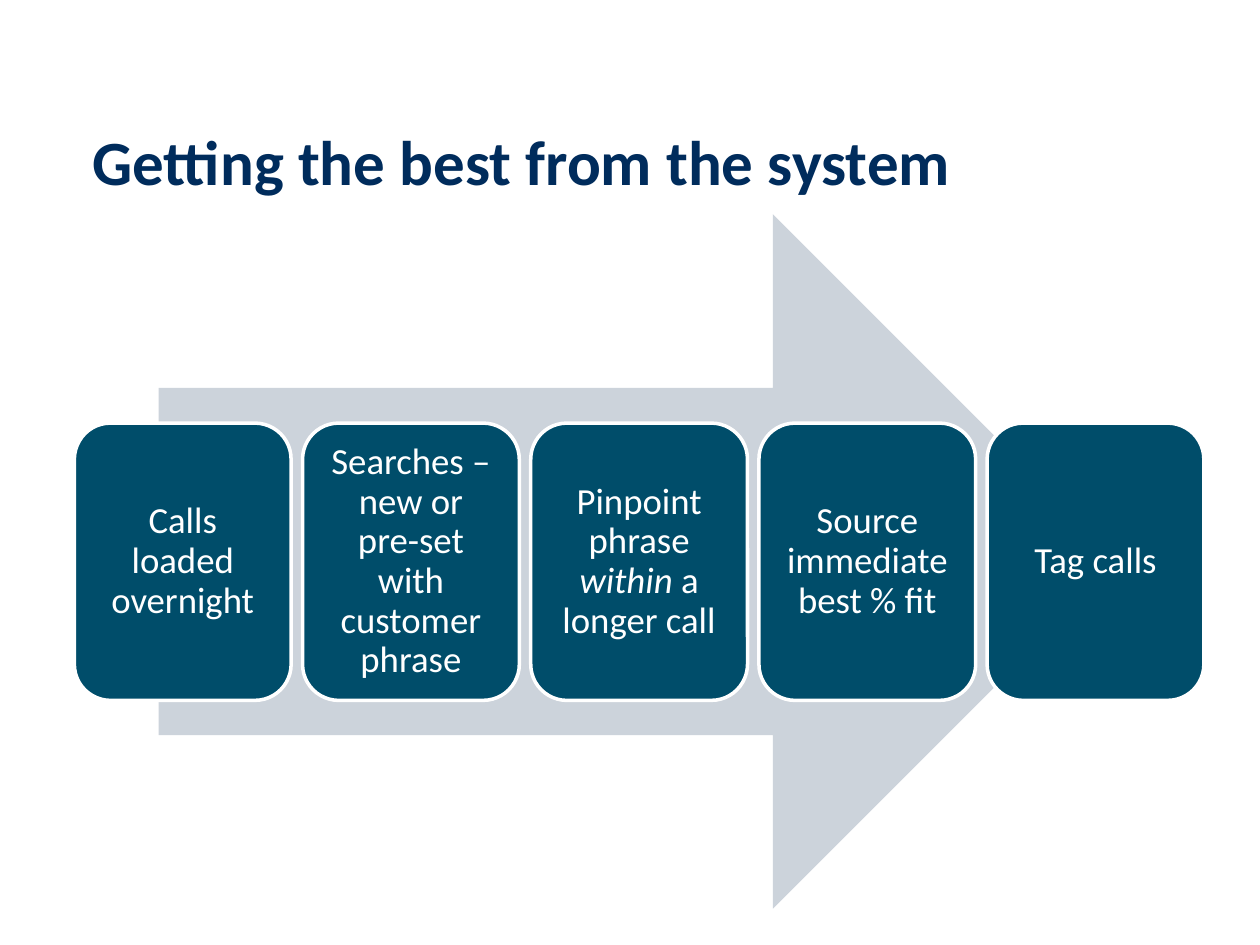
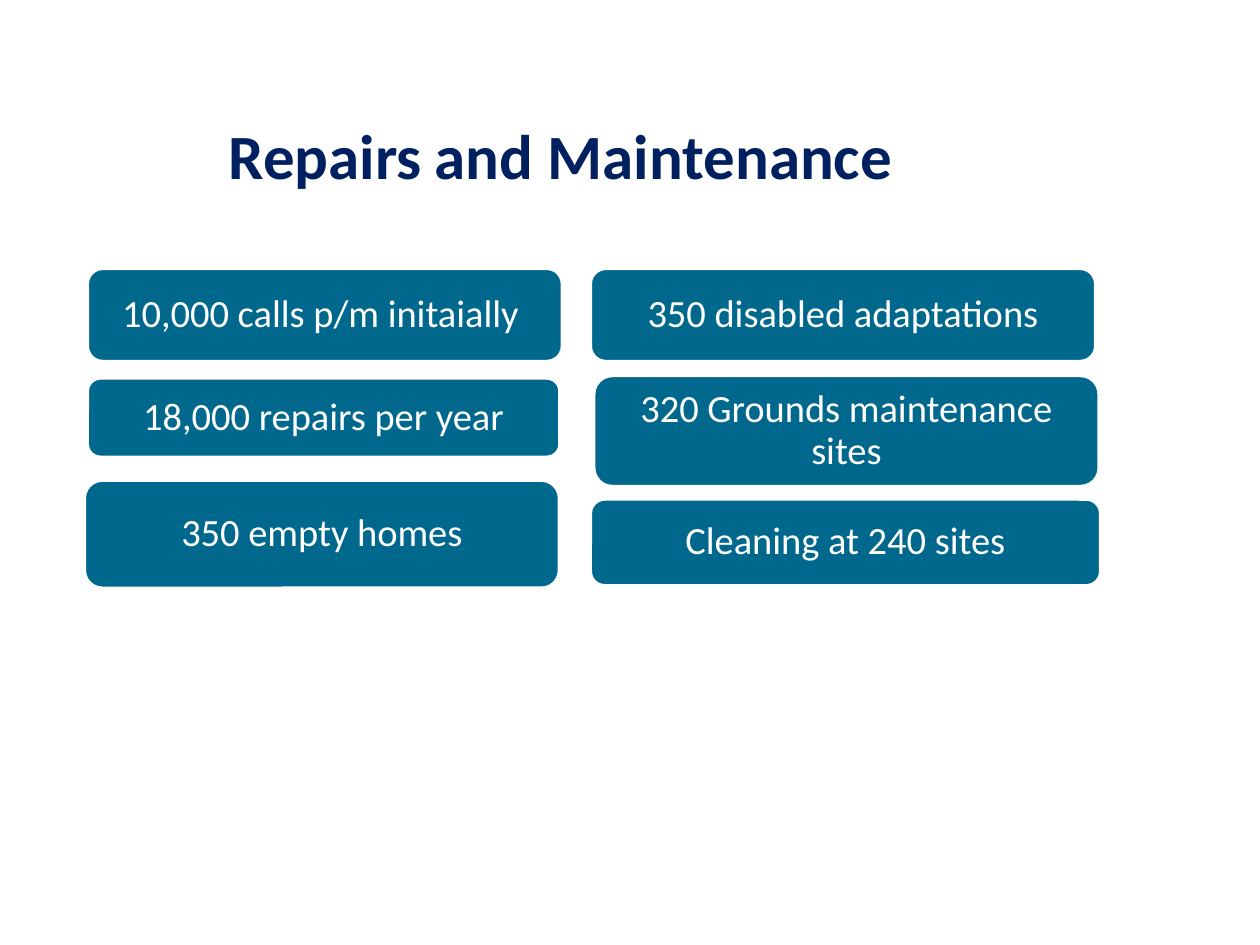
"""Build two slides: a five-step call process and the repairs workload figures."""
from pptx import Presentation
from pptx import util as u
from pptx.dml.color import RGBColor
from pptx.enum import shapes, text

WHITE = RGBColor(0xFF, 0xFF, 0xFF)
NAVY = RGBColor(0x00, 0x2C, 0x5C)
INDIGO = RGBColor(0x00, 0x20, 0x60)
PALE_GREY = RGBColor(0xCC, 0xD3, 0xDB)
DEEP_TEAL = RGBColor(0x00, 0x4D, 0x6A)
TEAL = RGBColor(0x00, 0x67, 0x8D)
FONT = "Calibri"
TITLE_ONLY = 5


def write(box, spans, size=21, color=WHITE, bold=False, spacing=0.9, margin=None):
    """Fill a box with centred spans, each a text and its own font settings."""
    frame = box.text_frame
    frame.word_wrap = True
    frame.auto_size = text.MSO_AUTO_SIZE.NONE
    frame.vertical_anchor = text.MSO_ANCHOR.MIDDLE
    if margin is not None:
        frame.margin_left = frame.margin_right = u.Cm(0.23)
        frame.margin_top = frame.margin_bottom = u.Cm(margin)
    para = frame.paragraphs[0]
    para.alignment = text.PP_ALIGN.CENTER
    para.line_spacing = spacing
    for words, settings in spans:
        span = para.add_run()
        span.text = words
        span.font.name = FONT
        span.font.size = u.Pt(settings.get("size", size))
        span.font.bold = bold
        span.font.italic = settings.get("italic", False)
        span.font.color.rgb = color


def add_box(page, kind, place, fill, outline=None):
    """Add a flat filled shape at a place given in centimetres."""
    box = page.shapes.add_shape(kind, *map(u.Cm, place))
    box.shadow.inherit = False
    box.fill.solid()
    box.fill.fore_color.rgb = fill
    if outline is None:
        box.line.fill.background()
    else:
        box.line.color.rgb = outline
        box.line.width = u.Pt(2)
    return box


deck = Presentation()
deck.slide_width, deck.slide_height = u.Cm(25.4), u.Cm(19.05)

titles = [
    ([("Getting the best from the system", {})], NAVY, (1.5, 1.93, 18.03, 2.59)),
    ([("Repairs", {}), (" ", {"size": 32}), ("and Maintenance", {})],
     INDIGO, (3.3, 1.52, 16, 3.2)),
]
pages = []
for spans, color, place in titles:
    page = deck.slides.add_slide(deck.slide_layouts[TITLE_ONLY])
    title = page.shapes.title
    title.left, title.top, title.width, title.height = map(u.Cm, place)
    write(title, spans, size=36, color=color, bold=True, spacing=1.0)
    pages.append(page)
process_page, workload_page = pages

add_box(process_page, shapes.MSO_SHAPE.RIGHT_ARROW, (3.2, 4.32, 19.38, 14), PALE_GREY)
steps = [
    [("Calls loaded overnight", {})],
    [("Searches – new or pre-set with customer phrase", {})],
    [("Pinpoint phrase ", {}), ("within", {"italic": True}), (" a longer call", {})],
    [("Source immediate best % fit", {})],
    [("Tag calls", {})],
]
for index, spans in enumerate(steps):
    place = (1.5 + 4.6 * index, 8.53, 4.37, 5.59)
    box = add_box(process_page, shapes.MSO_SHAPE.ROUNDED_RECTANGLE, place, DEEP_TEAL, WHITE)
    write(box, spans, margin=0.23)

workload = [
    ("10,000 calls p/m initaially ", (1.76, 5.41, 9.58, 1.88)),
    ("18,000 repairs per year", (1.76, 7.62, 9.53, 1.6)),
    ("350 empty homes", (1.7, 9.68, 9.58, 2.18)),
    ("350 disabled adaptations", (11.9, 5.41, 10.19, 1.88)),
    ("320 Grounds maintenance sites", (11.97, 7.57, 10.19, 2.24)),
    ("Cleaning at 240 sites", (11.9, 10.06, 10.29, 1.75)),
]
for words, place in workload:
    box = add_box(workload_page, shapes.MSO_SHAPE.ROUNDED_RECTANGLE, place, TEAL, WHITE)
    write(box, [(words, {})], size=22, margin=0.13)

deck.save("out.pptx")
